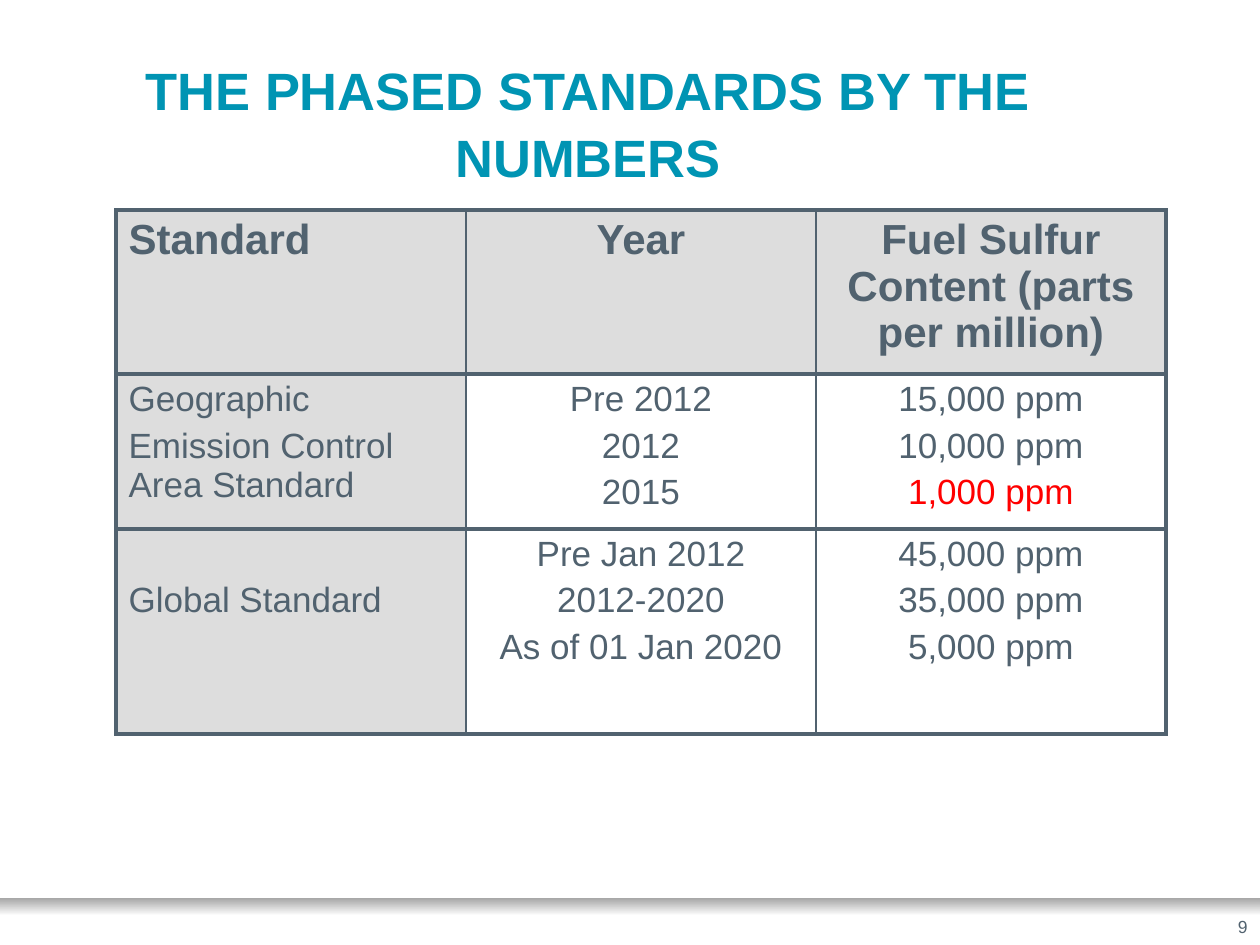
from lxml import etree
from pptx import Presentation
from pptx.dml.color import RGBColor
from pptx.enum.shapes import MSO_SHAPE
from pptx.enum.text import MSO_ANCHOR, PP_ALIGN
from pptx.oxml.ns import qn
from pptx.util import Emu, Pt

LEFT, CENTER, RIGHT = PP_ALIGN.LEFT, PP_ALIGN.CENTER, PP_ALIGN.RIGHT
MIDDLE = MSO_ANCHOR.MIDDLE
SLATE, TEAL, RED, GREY, WHITE = "51626F", "0094B3", "FF0000", "DDDDDD", "FFFFFF"

# Content: each cell is a list of paragraphs
TITLE = "THE PHASED STANDARDS BY THE NUMBERS"
PAGE = "9"
ROWS = [
    [["Standard"], ["Year"], ["Fuel Sulfur Content (parts per million)"]],
    [["Geographic", "Emission Control Area Standard"],
     ["Pre 2012", "2012", "2015"],
     ["15,000 ppm", "10,000 ppm", "1,000 ppm"]],
    [["Global Standard"],
     ["Pre Jan 2012", "2012-2020", "As of 01 Jan 2020"],
     ["45,000 ppm", "35,000 ppm", "5,000 ppm"]],
]
HIGHLIGHT = "1,000 ppm"
ROW_HEIGHTS = [164, 155, 205]
COLUMN_WIDTH = 350
GLOBAL_LABEL_TOP = 52  # lines the label up with the second year


def px(n):
    return Emu(round(n * 914400 / 126))


def rgb(value):
    return RGBColor.from_string(value)


def write(frame, lines, size, color, align, bold=False, gap=0):
    for i, line in enumerate(lines):
        paragraph = frame.paragraphs[0] if i == 0 else frame.add_paragraph()
        paragraph.alignment = align
        paragraph.space_before = Pt(gap if i else 0)
        run = paragraph.add_run()
        run.text = line
        run.font.name, run.font.size, run.font.bold = "Arial", Pt(size), bold
        run.font.color.rgb = rgb(RED if line == HIGHLIGHT else color)


def add_text(slide, box, text, size, color, align, bold=False):
    frame = slide.shapes.add_textbox(*map(px, box)).text_frame
    frame.word_wrap = True
    frame.vertical_anchor = MIDDLE
    write(frame, [text], size, color, align, bold)
    return frame


def set_borders(cell, widths):
    properties = cell._tc.get_or_add_tcPr()
    for i, (side, width) in enumerate(widths.items()):
        line = etree.Element(qn(f"a:ln{side}"), w=str(Pt(width)))
        fill = etree.SubElement(line, qn("a:solidFill"))
        etree.SubElement(fill, qn("a:srgbClr"), val=SLATE)
        properties.insert(i, line)


def add_standards_table(slide):
    columns = len(ROWS[0])
    frame = slide.shapes.add_table(
        len(ROWS), columns, px(116), px(210),
        px(COLUMN_WIDTH * columns), px(sum(ROW_HEIGHTS)))
    table = frame.table
    for column in table.columns:
        column.width = px(COLUMN_WIDTH)
    for r, (row, height) in enumerate(zip(ROWS, ROW_HEIGHTS)):
        table.rows[r].height = px(height)
        for c, lines in enumerate(row):
            cell = table.cell(r, c)
            header = r == 0
            if header or c == 0:
                cell.fill.solid()
                cell.fill.fore_color.rgb = rgb(GREY)
            else:
                cell.fill.background()
            set_borders(cell, {"L": 1 if c else 2.25,
                               "R": 2.25 if c == columns - 1 else 1,
                               "T": 2.25, "B": 2.25})
            write(cell.text_frame, lines, 24 if header else 20, SLATE,
                  CENTER if c else LEFT, bold=header, gap=4)
    table.cell(2, 0).margin_top = px(GLOBAL_LABEL_TOP)


def add_footer_band(slide):
    band = slide.shapes.add_shape(MSO_SHAPE.RECTANGLE, px(0), px(898), px(1260), px(42))
    band.shadow.inherit = False
    band.line.fill.background()
    band.fill.gradient()
    band.fill.gradient_angle = 270  # counter-clockwise: top to bottom
    for stop, color, position in zip(band.fill.gradient_stops, ("A6A6A6", WHITE), (0, 0.42)):
        stop.color.rgb = rgb(color)
        stop.position = position


def main():
    deck = Presentation()
    deck.slide_width, deck.slide_height = px(1260), px(945)
    slide = deck.slides.add_slide(deck.slide_layouts[6])

    # Footer band and page number
    add_footer_band(slide)
    add_text(slide, (966, 914, 294, 26), PAGE, 10, SLATE, RIGHT)

    # Title and table
    title = add_text(slide, (105, 42, 966, 157), TITLE, 30, TEAL, CENTER, bold=True)
    title.paragraphs[0].line_spacing = 1.07
    add_standards_table(slide)

    deck.save("out.pptx")


if __name__ == "__main__":
    main()
